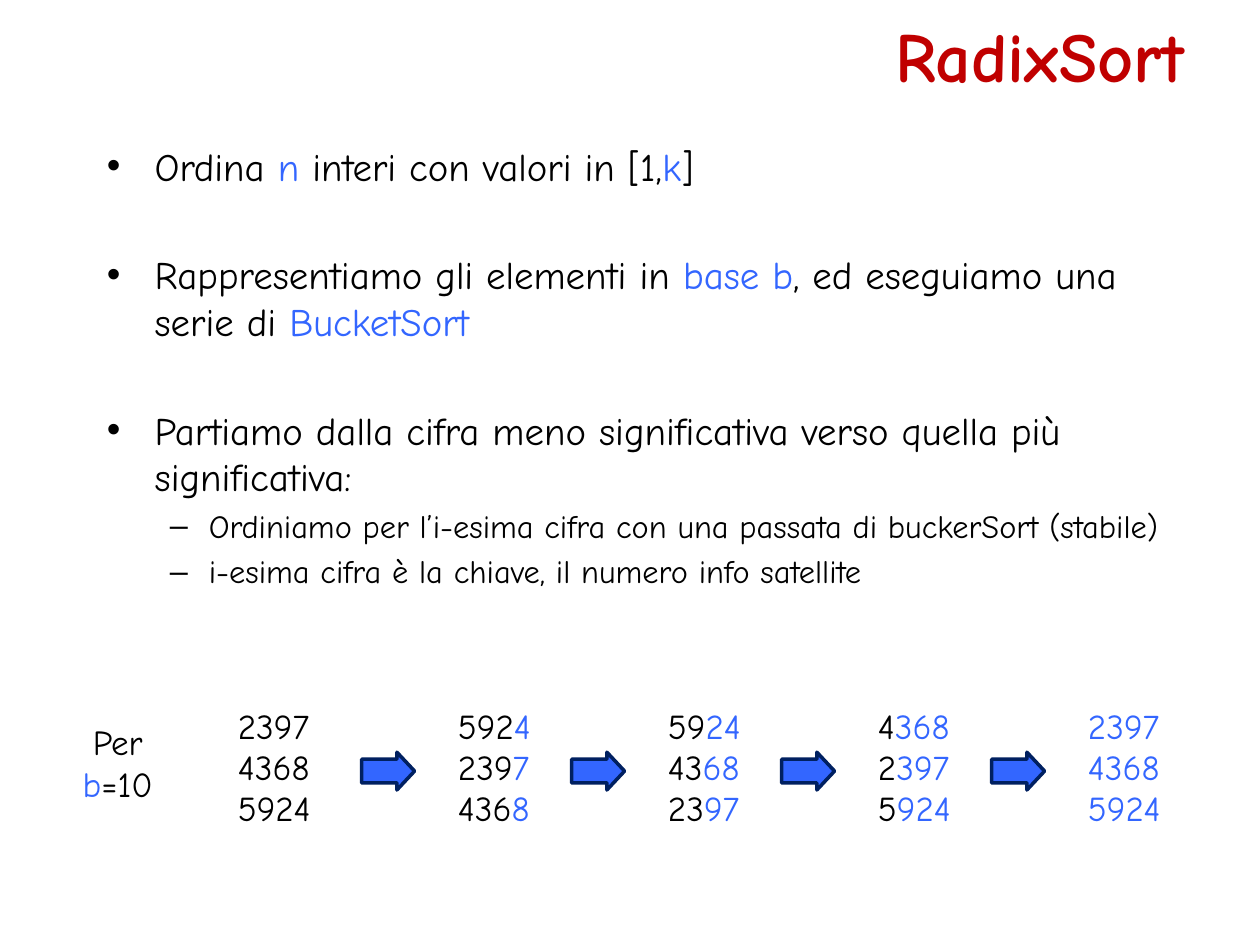
from lxml import etree
from pptx import Presentation
from pptx.dml.color import RGBColor
from pptx.enum import shapes, text
from pptx.oxml.ns import qn
from pptx.util import Inches, Pt

BLACK = RGBColor(0x00, 0x00, 0x00)
BLUE = RGBColor(0x33, 0x66, 0xFF)
NAVY = RGBColor(0x00, 0x20, 0x60)
RED = RGBColor(0xC0, 0x00, 0x00)

deck = Presentation()
deck.slide_width, deck.slide_height = Inches(10), Inches(7.5)
slide = deck.slides.add_slide(deck.slide_layouts[6])


def add_frame(left, top, width, height):
    frame = slide.shapes.add_textbox(
        Inches(left), Inches(top), Inches(width), Inches(height)).text_frame
    frame.word_wrap = True
    frame.vertical_anchor = text.MSO_ANCHOR.TOP
    return frame


def add_runs(paragraph, size, runs, bold=False):
    for words, colour in runs:
        run = paragraph.add_run()
        run.text = words
        run.font.name = "Comic Neue"
        run.font.size = Pt(size)
        run.font.bold = bold
        run.font.color.rgb = colour


# Title
title = add_frame(0.5, 0.05, 9, 1).paragraphs[0]
title.alignment = text.PP_ALIGN.RIGHT
add_runs(title, 40, [("RadixSort", RED)], bold=True)

# Bulleted points: level, space before, runs
points = [
    (0, 0, [("Ordina ", BLACK), ("n", BLUE), (" interi con valori in [1,", BLACK),
            ("k", BLUE), ("]", BLACK)]),
    (0, 35.5, [("Rappresentiamo gli elementi in ", BLACK), ("base b", BLUE),
               (", ed eseguiamo una serie di ", BLACK), ("BucketSort", BLUE)]),
    (0, 35.5, [("Partiamo dalla cifra meno significativa verso quella più "
                "significativa:", BLACK)]),
    (1, 3.7, [("Ordiniamo per l’i-esima cifra con una passata di buckerSort "
               "(stabile)", BLACK)]),
    (1, 3.7, [("i-esima cifra è la chiave, il numero info satellite", BLACK)]),
]
# Per level: text size, left margin, hanging indent, bullet
levels = [(22.2, 0.38, -0.38, "•"), (18.5, 0.81, -0.31, "–")]
body = add_frame(0.75, 1.08, 8.83, 3.83)
for i, (level, gap, runs) in enumerate(points):
    point = body.add_paragraph() if i else body.paragraphs[0]
    size, margin, indent, bullet = levels[level]
    point.level = level
    point.space_before = Pt(gap)
    properties = point._p.get_or_add_pPr()
    properties.set("marL", str(Inches(margin)))
    properties.set("indent", str(Inches(indent)))
    etree.SubElement(properties, qn("a:buFont")).set("typeface", "Arial")
    etree.SubElement(properties, qn("a:buChar")).set("char", bullet)
    add_runs(point, size, runs)

# Base label
base = add_frame(0.35, 5.67, 1.17, 0.77).paragraphs[0]
base.alignment = text.PP_ALIGN.CENTER
add_runs(base, 20, [("Per ", BLACK), ("b", BLUE), ("=10", BLACK)])

# Sorting passes: after pass d the last d digits are in order
STEP = 5 / 3
numbers = ["2397", "4368", "5924"]
for done in range(5):
    left = 1.87 + done * STEP if done else 1.79
    column = add_frame(left, 5.61, 1.17, 1.25)
    split = 4 - done
    if done:
        numbers.sort(key=lambda number: number[split])
    for row, number in enumerate(numbers):
        line = column.add_paragraph() if row else column.paragraphs[0]
        line.line_spacing = 0.8
        line.space_before = Pt(4 if row else 0)
        parts = [(number[:split], BLACK), (number[split:], BLUE)]
        add_runs(line, 20, [part for part in parts if part[0]])

    # Arrow to the next pass
    if done < 4:
        arrow = slide.shapes.add_shape(
            shapes.MSO_SHAPE.RIGHT_ARROW, Inches(2.87 + done * STEP), Inches(5.97),
            Inches(0.42), Inches(0.3))
        arrow.adjustments[0], arrow.adjustments[1] = 0.625, 0.467
        arrow.shadow.inherit = False
        arrow.fill.solid()
        arrow.fill.fore_color.rgb = BLUE
        arrow.line.color.rgb = NAVY
        arrow.line.width = Pt(2)

deck.save("out.pptx")
